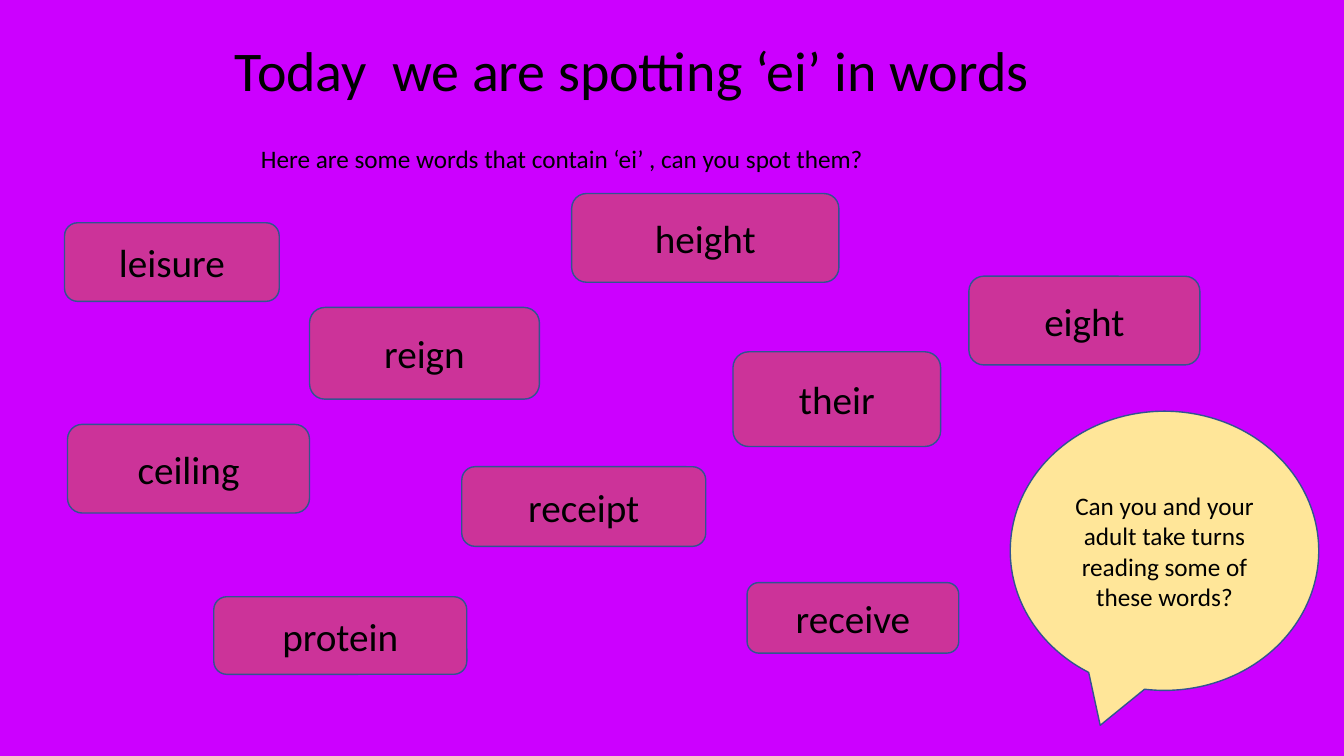
import pptx
import pptx.util
import pptx.dml.color
import pptx.enum.shapes
import pptx.enum.text

Inches, Pt = pptx.util.Inches, pptx.util.Pt
SHAPE = pptx.enum.shapes.MSO_SHAPE
ALIGN = pptx.enum.text.PP_ALIGN
ANCHOR = pptx.enum.text.MSO_ANCHOR

# Content: text and box (left, top, width, height) in inches
COLORS = {"background": "CC00FF", "card": "CC3399", "bubble": "FFE699",
          "outline": "325491", "text": "000000"}
FONT = "Calibri"
WORDS = [
    ("leisure", (0.64, 2.21, 2.13, 0.78)),
    ("height", (5.67, 1.92, 2.65, 0.88)),
    ("eight", (9.61, 2.74, 2.29, 0.88)),
    ("reign", (3.07, 3.05, 2.28, 0.91)),
    ("their", (7.27, 3.49, 2.06, 0.94)),
    ("ceiling", (0.67, 4.21, 2.4, 0.88)),
    ("receipt", (4.58, 4.63, 2.42, 0.79)),
    ("protein", (2.12, 5.92, 2.51, 0.77)),
    ("receive", (7.41, 5.78, 2.1, 0.7)),
]
CHALLENGE = ("Can you and your adult take turns reading some of these words?",
             (10.02, 4.08, 3.06, 2.77))
QUESTION = ("Here are some words that contain ‘ei’ , can you spot them?",
            (2.49, 1.37, 8.14, 0.4))
TITLE = ("Today  we are spotting ‘ei’ in words", (2.23, 0.3, 8.17, 0.77))


def rgb(name):
    return pptx.dml.color.RGBColor.from_string(COLORS[name])


def write(sp, text, size, align):
    p = sp.text_frame.paragraphs[0]
    p.text = text
    p.alignment = align
    p.font.name = FONT
    p.font.size = Pt(size)
    p.font.color.rgb = rgb("text")


def add_panel(slide, kind, text, box, fill, size):
    sp = slide.shapes.add_shape(kind, *map(Inches, box))
    sp.shadow.inherit = False
    sp.fill.solid()
    sp.fill.fore_color.rgb = rgb(fill)
    sp.line.color.rgb = rgb("outline")
    sp.line.width = Pt(1)
    sp.text_frame.word_wrap = True
    sp.text_frame.vertical_anchor = ANCHOR.MIDDLE
    write(sp, text, size, ALIGN.CENTER)


def add_text(slide, text, box, size, wrap):
    sp = slide.shapes.add_textbox(*map(Inches, box))
    sp.text_frame.word_wrap = wrap
    sp.text_frame.auto_size = pptx.enum.text.MSO_AUTO_SIZE.SHAPE_TO_FIT_TEXT
    write(sp, text, size, ALIGN.LEFT)


def main():
    prs = pptx.Presentation()
    prs.slide_width, prs.slide_height = Inches(13.33), Inches(7.5)
    slide = prs.slides.add_slide(prs.slide_layouts[6])
    slide.background.fill.solid()
    slide.background.fill.fore_color.rgb = rgb("background")

    # Word cards
    for word, box in WORDS:
        add_panel(slide, SHAPE.ROUNDED_RECTANGLE, word, box, "card", 28)

    # Speech bubble
    add_panel(slide, SHAPE.OVAL_CALLOUT, *CHALLENGE, "bubble", 18)

    # Question and title
    add_text(slide, *QUESTION, 18, True)
    add_text(slide, *TITLE, 40, False)

    prs.save("out.pptx")


if __name__ == "__main__":
    main()
